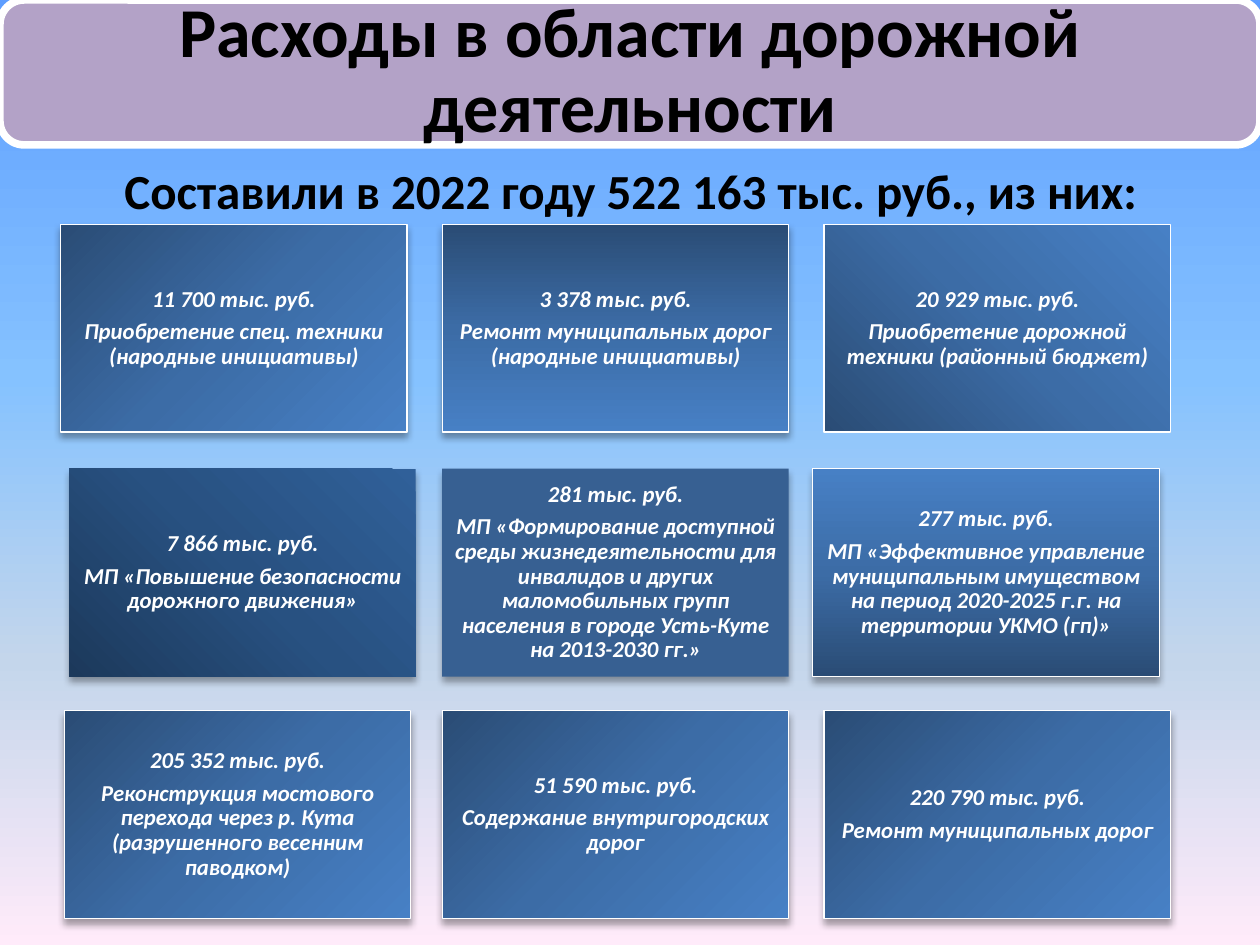
from pptx import Presentation
from pptx.dml.color import RGBColor
from pptx.enum.shapes import MSO_SHAPE
from pptx.enum.text import MSO_ANCHOR, PP_ALIGN
from pptx.oxml import parse_xml
from pptx.oxml.ns import nsdecls, qn
from pptx.util import Inches, Pt

RECTANGLE = MSO_SHAPE.RECTANGLE
ROUNDED = MSO_SHAPE.ROUNDED_RECTANGLE
MIDDLE = MSO_ANCHOR.MIDDLE
CENTER = PP_ALIGN.CENTER

FONT = "Calibri"
TITLE = "Расходы в области дорожной деятельности"
SUBTITLE = "Составили в 2022 году 522 163 тыс. руб., из них:"

SKY = [(0, "5E9EFF"), (40, "85C2FF"), (70, "C4D6EB"), (100, "FFEBFA")]
BLUE = [(0, "2A4C75"), (50, "3C6CA6"), (100, "4780C5")]
NAVY = [(0, "1C395B"), (50, "285181"), (100, "306099")]
PLAIN = "376092"
CORNER = "corner"

CARD_WIDTH, CARD_HEIGHT = 2.75, 1.65
CARD_ROWS = [
    (1.78, [
        (0.48, 45, "11 700 тыс. руб.", "Приобретение спец. техники (народные инициативы)"),
        (3.51, 90, "3 378 тыс. руб.", "Ремонт муниципальных дорог (народные инициативы)"),
        (6.54, 315, "20 929 тыс. руб.", "Приобретение дорожной техники (районный бюджет)"),
    ]),
    (3.72, [
        (0.55, CORNER, "7 866 тыс. руб.", "МП «Повышение безопасности дорожного движения»"),
        (3.51, PLAIN, "281 тыс. руб.",
         "МП «Формирование доступной среды жизнедеятельности для инвалидов и других "
         "маломобильных групп населения в городе Усть-Куте на 2013-2030 гг.»"),
        (6.45, 270, "277 тыс. руб.",
         "МП «Эффективное управление муниципальным имуществом на период 2020-2025 г.г. "
         "на территории УКМО (гп)»"),
    ]),
    (5.64, [
        (0.51, 45, "205 352 тыс. руб.",
         "Реконструкция мостового перехода через р. Кута (разрушенного весенним паводком)"),
        (3.51, 45, "51 590 тыс. руб.", "Содержание внутригородских дорог"),
        (6.54, 45, "220 790 тыс. руб.", "Ремонт муниципальных дорог"),
    ]),
]


def color(value):
    return RGBColor.from_string(value)


def set_gradient(fill, element, stops, direction):
    fill.gradient()
    stop_xml = "".join(
        f'<a:gs pos="{position * 1000}"><a:srgbClr val="{value}"/></a:gs>'
        for position, value in stops)
    if direction == CORNER:
        shade = '<a:path path="circle"><a:fillToRect t="100000" r="100000"/></a:path>'
    else:
        shade = f'<a:lin ang="{direction * 60000}" scaled="0"/>'
    gradient = next(element.iter(qn("a:gradFill")))
    gradient.getparent().replace(gradient, parse_xml(
        f'<a:gradFill {nsdecls("a")} rotWithShape="1">'
        f'<a:gsLst>{stop_xml}</a:gsLst>{shade}</a:gradFill>'))


def set_solid(shape, value):
    shape.fill.solid()
    shape.fill.fore_color.rgb = color(value)


def set_line(shape, width):
    shape.line.color.rgb = color("FFFFFF")
    shape.line.width = Pt(width)


def add_shadow(shape):
    effects = shape._element.spPr.find(qn("a:effectLst"))
    effects.append(parse_xml(
        f'<a:outerShdw {nsdecls("a")} blurRad="{Pt(4)}" dist="{Pt(3)}" dir="5400000" '
        'rotWithShape="0"><a:srgbClr val="000000"><a:alpha val="35000"/></a:srgbClr>'
        '</a:outerShdw>'))


def write(shape, lines, size, value, inset, spacing=0.9, after=0.35, italic=False):
    frame = shape.text_frame
    frame.word_wrap = True
    frame.vertical_anchor = MIDDLE
    frame.margin_left = frame.margin_right = Inches(inset)
    frame.margin_top = frame.margin_bottom = Inches(min(inset, 0.05))
    frame.text = "\n".join(lines)
    for paragraph in frame.paragraphs:
        paragraph.alignment = CENTER
        paragraph.line_spacing = spacing
        paragraph.space_after = Pt(round(size * after, 2))
        for run in paragraph.runs:
            run.font.name = FONT
            run.font.size = Pt(size)
            run.font.bold = True
            run.font.italic = italic
            run.font.color.rgb = color(value)


def add_box(slide, kind, left, top, width, height):
    shape = slide.shapes.add_shape(
        kind, Inches(left), Inches(top), Inches(width), Inches(height))
    shape.shadow.inherit = False
    return shape


def add_card(slide, left, top, style, amount, purpose):
    card = add_box(slide, RECTANGLE, left, top, CARD_WIDTH, CARD_HEIGHT)
    if style == PLAIN:
        set_solid(card, PLAIN)
    else:
        stops = NAVY if style == CORNER else BLUE
        set_gradient(card.fill, card._element, stops, style)
    if style in (PLAIN, CORNER):
        card.line.fill.background()
    else:
        set_line(card, 0.75)
    if style != 315:
        add_shadow(card)
    write(card, [amount, purpose], 13, "FFFFFF", 0.05, italic=True)


def main():
    presentation = Presentation()
    presentation.slide_width = Inches(10)
    presentation.slide_height = Inches(7.5)
    slide = presentation.slides.add_slide(presentation.slide_layouts[6])
    set_gradient(slide.background.fill, slide._element, SKY, 90)

    banner = add_box(slide, ROUNDED, 0, 0, 10, 1.15)
    set_solid(banner, "B3A2C7")
    set_line(banner, 4.33)
    write(banner, [TITLE], 40, "000000", 0.23)

    for top, cards in CARD_ROWS:
        for left, style, amount, purpose in cards:
            add_card(slide, left, top, style, amount, purpose)

    subtitle = slide.shapes.add_textbox(
        Inches(0.24), Inches(1.15), Inches(9.53), Inches(0.71))
    write(subtitle, [SUBTITLE], 28, "000000", 0.1, spacing=1.0, after=0)

    presentation.save("out.pptx")


if __name__ == "__main__":
    main()
